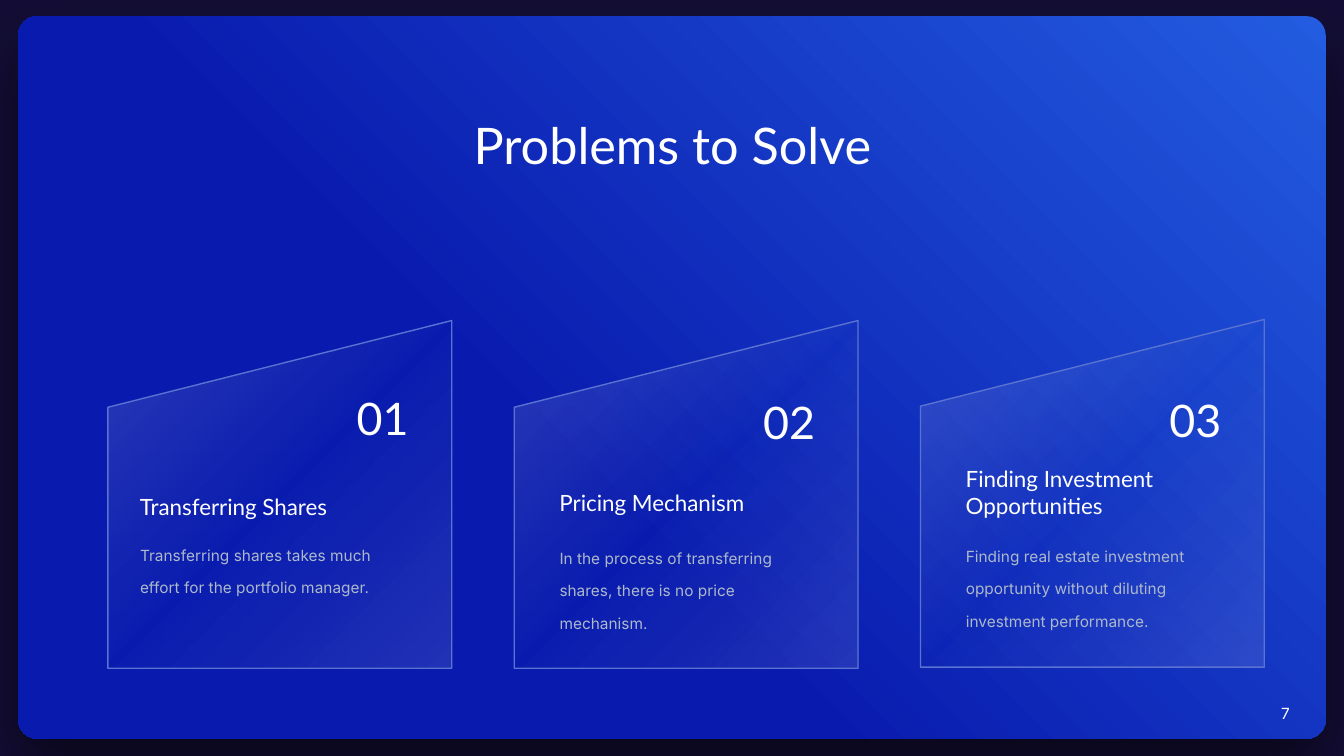
from dataclasses import dataclass

from pptx import Presentation
from pptx.dml.color import RGBColor
from pptx.enum.shapes import MSO_SHAPE as Shape
from pptx.enum.text import MSO_AUTO_SIZE as Fit, PP_ALIGN as Align
from pptx.oxml import parse_xml
from pptx.oxml.ns import nsdecls, qn
from pptx.util import Emu, Inches, Pt

# Grid: 100 columns by 100 rows
WIDTH, HEIGHT = Inches(13.33), Inches(7.5)
LEFT, PITCH, SPAN = 8.03, 30.23, 25.58  # card columns
RISE, TALL = 11.47, 46  # card rows
WHITE, GREY = "FFFFFF", "ADB9CA"
Stops = list[tuple[int, str, int]]  # place, colour, opacity in percent


@dataclass
class Style:
    font: str
    size: int
    color: str
    align: Align = Align.LEFT
    lead: float | None = None


@dataclass
class Card:
    num: str
    head: str
    body: str
    top: float
    inset: float
    num_row: float
    head_row: float
    body_row: float
    head_tall: float
    body_tall: float


TITLE = Style("Lato", 36, WHITE, Align.CENTER)
NUM = Style("Lato", 32, WHITE, Align.CENTER)
HEAD = Style("Lato", 16, WHITE)
BODY = Style("Inter", 11, GREY, lead=1.75)
PAGE = Style("Inter", 11, WHITE, Align.RIGHT)

CARDS = [
    Card("01", "Transferring Shares",
         "Transferring shares takes much effort for the portfolio manager.",
         42.4, 1.65, 51.07, 64.53, 69.73, 4.93, 9.33),
    Card("02", "Pricing Mechanism",
         "In the process of transferring shares, there is no price mechanism.",
         42.4, 2.63, 51.6, 64, 70.13, 4.93, 13.73),
    Card("03", "Finding Investment Opportunities",
         "Finding real estate investment opportunity without diluting "
         "investment performance.",
         42.25, 2.63, 51.33, 60.93, 69.87, 8.53, 13.73),
]
PANEL_FILL: Stops = [(0, "235CE0", 100), (60, "091BAE", 100), (100, "091BAE", 100)]
CARD_FILL: Stops = [(0, WHITE, 15), (50, "D8E9EC", 0), (100, WHITE, 10)]


def col(n: float) -> Emu:
    return Emu(round(WIDTH * n / 100))


def row(n: float) -> Emu:
    return Emu(round(HEIGHT * n / 100))


def rgb(color: str) -> RGBColor:
    return RGBColor.from_string(color)


def blend(shape, stops: Stops, angle: int) -> None:
    """Fill a shape with a linear gradient, angle clockwise in degrees."""
    marks = "".join(
        f'<a:gs pos="{place * 1000}"><a:srgbClr val="{color}">'
        f'<a:alpha val="{alpha * 1000}"/></a:srgbClr></a:gs>'
        for place, color, alpha in stops)
    grad = parse_xml(
        f'<a:gradFill {nsdecls("a")} rotWithShape="1"><a:gsLst>{marks}</a:gsLst>'
        f'<a:lin ang="{angle * 60000}" scaled="0"/></a:gradFill>')
    shape.fill.background()
    props = shape._element.spPr
    props.replace(props.find(qn("a:noFill")), grad)


def write(slide, text: str, style: Style, x: float, y: float,
          wide: float, tall: float) -> None:
    box = slide.shapes.add_textbox(col(x), row(y), col(wide), row(tall))
    frame = box.text_frame
    frame.word_wrap = True
    frame.auto_size = Fit.SHAPE_TO_FIT_TEXT
    para = frame.paragraphs[0]
    para.alignment = style.align
    if style.lead:
        para.line_spacing = style.lead
    run = para.add_run()
    run.text = text
    run.font.name = style.font
    run.font.size = Pt(style.size)
    run.font.color.rgb = rgb(style.color)


def draw_panel(slide) -> None:
    panel = slide.shapes.add_shape(
        Shape.ROUNDED_RECTANGLE, col(1.35), row(2.13), col(97.3), row(95.6))
    panel.adjustments[0] = 0.027
    panel.line.fill.background()
    blend(panel, PANEL_FILL, 135)
    panel._element.spPr.append(parse_xml(
        f'<a:effectLst {nsdecls("a")}><a:outerShdw blurRad="{Pt(45)}" '
        f'dist="{Pt(24)}" dir="5400000" algn="t" rotWithShape="0">'
        '<a:srgbClr val="000000"><a:alpha val="49000"/></a:srgbClr>'
        '</a:outerShdw></a:effectLst>'))


def draw_card(slide, card: Card, x: float) -> None:
    # Slanted outline
    right, base = x + SPAN, card.top + TALL
    pen = slide.shapes.build_freeform(col(right), row(card.top))
    pen.add_line_segments([(col(right), row(base)), (col(x), row(base)),
                           (col(x), row(card.top + RISE))], close=True)
    pane = pen.convert_to_shape()
    pane.shadow.inherit = False
    pane.line.color.rgb = rgb("5A72D1")
    pane.line.width = Pt(1)
    blend(pane, CARD_FILL, 45)
    # Texts
    start = x + card.inset
    write(slide, card.num, NUM, x + 16.7, card.num_row, 7.5, 8.53)
    write(slide, card.head, HEAD, start, card.head_row, 21, card.head_tall)
    write(slide, card.body, BODY, start, card.body_row, 20.4, card.body_tall)


def main() -> None:
    deck = Presentation()
    deck.slide_width, deck.slide_height = WIDTH, HEIGHT
    slide = deck.slides.add_slide(deck.slide_layouts[6])
    # Backdrop
    slide.background.fill.solid()
    slide.background.fill.fore_color.rgb = rgb("140E36")
    draw_panel(slide)
    # Title, cards and page number
    write(slide, "Problems to Solve", TITLE, 14.48, 14.4, 71.1, 9.47)
    for i, card in enumerate(CARDS):
        draw_card(slide, card, LEFT + i * PITCH)
    write(slide, "7", PAGE, 93.1, 92.53, 3.6, 3.87)
    deck.save("out.pptx")


if __name__ == "__main__":
    main()
